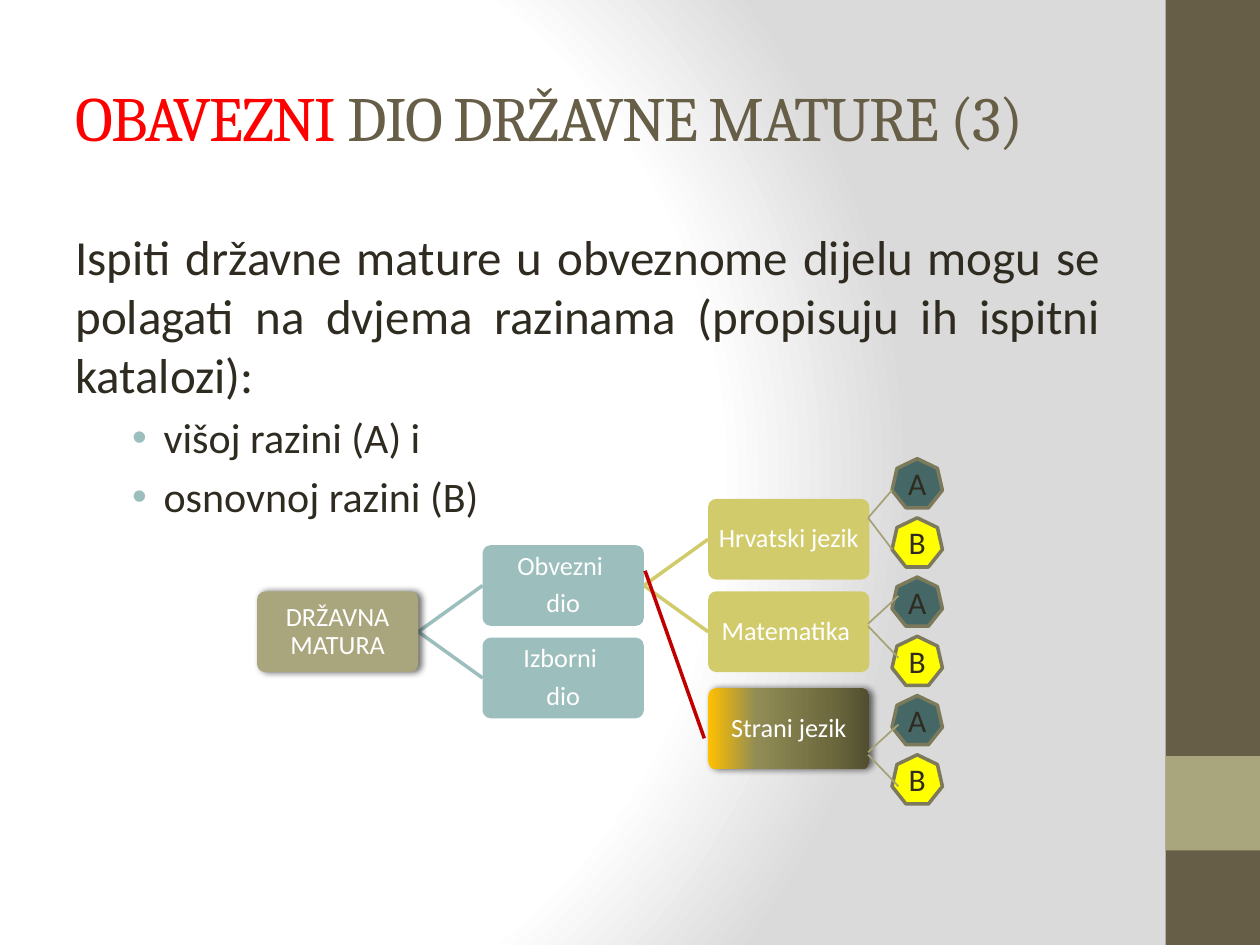
from lxml import etree
from pptx import Presentation
from pptx.dml.color import RGBColor
from pptx.enum.shapes import MSO_CONNECTOR, MSO_SHAPE
from pptx.enum.text import MSO_ANCHOR, PP_ALIGN
from pptx.oxml import parse_xml
from pptx.oxml.ns import nsdecls, qn
from pptx.util import Inches, Pt

RECT, ROUND, HEPTAGON = MSO_SHAPE.RECTANGLE, MSO_SHAPE.ROUNDED_RECTANGLE, MSO_SHAPE.HEPTAGON
STRAIGHT = MSO_CONNECTOR.STRAIGHT
TOP, MIDDLE = MSO_ANCHOR.TOP, MSO_ANCHOR.MIDDLE
LEFT, CENTER, JUSTIFY = PP_ALIGN.LEFT, PP_ALIGN.CENTER, PP_ALIGN.JUSTIFY

COLORS = {
    "brown": "675E47", "olive": "A9A57C", "teal": "9CBEBD", "lime": "D2CB6C",
    "dark_teal": "456867", "yellow": "FFFF00", "outline": "7D7A5C", "fork": "A6A278",
    "red": "FF0000", "dark_red": "C00000", "text": "2F2B20", "white": "FFFFFF",
}
BACKDROP = [(0, "FFFFFF"), (75, "FFFFFF"), (100, "DADADA")]
AMBER = [(0, "FFC000"), (30, "918C56"), (75, "6E6A3F"), (100, "514E2F")]

# Tree grid: columns one pitch apart, rows half a box pitch apart
TREE_X, TREE_Y, COL, ROW = 2.04, 3.96, 1.79, 0.367
BOX_W, BOX_H = 1.28, 0.64
LEVEL_X, LEVEL_Y, LEVEL_STEP = 7.08, 3.64, 0.47


def color(name):
    return RGBColor.from_string(COLORS[name])


def gradient_xml(stops, direction):
    gs = "".join(f'<a:gs pos="{pos * 1000}"><a:srgbClr val="{rgb}"/></a:gs>' for pos, rgb in stops)
    return f'<a:gradFill {nsdecls("a")} rotWithShape="1"><a:gsLst>{gs}</a:gsLst>{direction}</a:gradFill>'


def set_background(s):
    circle = '<a:path path="circle"><a:fillToRect l="20000" t="50000" r="100000" b="50000"/></a:path>'
    bg = parse_xml(f'<p:bg {nsdecls("p", "a")}><p:bgPr>{gradient_xml(BACKDROP, circle)}'
                   '<a:effectLst/></p:bgPr></p:bg>')
    s._element.cSld.insert(0, bg)


def add_shape(s, kind, x, y, w, h, fill, line=None):
    sp = s.shapes.add_shape(kind, Inches(x), Inches(y), Inches(w), Inches(h))
    sp.shadow.inherit = False
    sp.fill.solid()
    sp.fill.fore_color.rgb = color(fill)
    if line:
        sp.line.color.rgb = color(line)
        sp.line.width = Pt(2)
    else:
        sp.line.fill.background()
    return sp


def add_shadow(sp):
    effects = sp._element.spPr.find(qn("a:effectLst"))
    effects.append(parse_xml(
        f'<a:outerShdw {nsdecls("a")} blurRad="50800" dist="25400" dir="0" rotWithShape="0">'
        '<a:srgbClr val="000000"><a:alpha val="60000"/></a:srgbClr></a:outerShdw>'))


def add_gradient(sp):
    solid = sp._element.spPr.find(qn("a:solidFill"))
    solid.getparent().replace(solid, parse_xml(gradient_xml(AMBER, '<a:lin ang="0" scaled="0"/>')))


def add_line(s, start, end, line, width=2):
    cx = s.shapes.add_connector(STRAIGHT, *(Inches(v) for v in (*start, *end)))
    cx.line.color.rgb = color(line)
    cx.line.width = Pt(width)
    etree.SubElement(cx._element.spPr, qn("a:effectLst"))


def setup_frame(tf, anchor, inset):
    tf.word_wrap = True
    tf.vertical_anchor = anchor
    tf.margin_left = tf.margin_right = tf.margin_top = tf.margin_bottom = Inches(inset)


def add_paragraph(tf, first, align):
    p = tf.paragraphs[0] if first else tf.add_paragraph()
    p.alignment = align
    return p


def add_run(p, text, size, name, font="Calibri"):
    r = p.add_run()
    r.text = text
    r.font.size = Pt(size)
    r.font.name = font
    r.font.color.rgb = color(name)
    return r


def add_text_area(s, y, h, anchor):
    tf = s.shapes.add_textbox(Inches(0.5), Inches(y), Inches(8.33), Inches(h)).text_frame
    setup_frame(tf, anchor, 0.05)
    tf.margin_left = tf.margin_right = Inches(0.1)
    return tf


def add_bullet(p):
    pPr = p._p.get_or_add_pPr()
    pPr.set("marL", str(Inches(0.7)))
    pPr.set("indent", str(Inches(-0.25)))
    bullet_color = etree.SubElement(pPr, qn("a:buClr"))
    etree.SubElement(bullet_color, qn("a:srgbClr"), val=COLORS["teal"])
    etree.SubElement(pPr, qn("a:buFont"), typeface="Arial")
    etree.SubElement(pPr, qn("a:buChar"), char="•")


def add_node(s, col, row, lines, fill):
    sp = add_shape(s, ROUND, TREE_X + col * COL, TREE_Y + row * ROW, BOX_W, BOX_H, fill)
    sp.adjustments[0] = 0.1
    setup_frame(sp.text_frame, MIDDLE, 0.01)
    for i, text in enumerate(lines):
        p = add_paragraph(sp.text_frame, i == 0, CENTER)
        p.line_spacing = 0.9
        p.space_after = Pt(5.25)
        add_run(p, text, 15, "white")
    return sp


def add_branch(s, col, row, to_row, line):
    x, mid = TREE_X + col * COL + BOX_W, TREE_Y + BOX_H / 2
    add_line(s, (x, mid + row * ROW), (TREE_X + (col + 1) * COL, mid + to_row * ROW), line)


def add_level(s, index, letter, fill):
    sp = add_shape(s, HEPTAGON, LEVEL_X, LEVEL_Y + index * LEVEL_STEP, 0.4, 0.39, fill, "outline")
    setup_frame(sp.text_frame, MIDDLE, 0)
    add_run(add_paragraph(sp.text_frame, True, CENTER), letter, 18, "text")


def main():
    prs = Presentation()
    prs.slide_width, prs.slide_height = Inches(10), Inches(7.5)
    s = prs.slides.add_slide(prs.slide_layouts[6])

    # Background and side band
    set_background(s)
    add_shape(s, RECT, 9.25, 0, 0.75, 7.5, "brown")
    add_shape(s, RECT, 9.25, 6, 0.75, 0.75, "olive")

    # Title
    p = add_paragraph(add_text_area(s, 0.3, 1.25, MIDDLE), True, LEFT)
    for text, name in (("OBAVEZNI", "red"), (" DIO DRŽAVNE MATURE (3)", "brown")):
        r = add_run(p, text, 36, name, "Cambria")
        r.font._element.set("spc", "-100")

    # Body text
    tf = add_text_area(s, 1.75, 5.25, TOP)
    p = add_paragraph(tf, True, JUSTIFY)
    p.space_before = Pt(5.6)
    add_run(p, "Ispiti državne mature u obveznome dijelu mogu se polagati na dvjema "
               "razinama (propisuju ih ispitni katalozi):", 28, "text")
    for text in ("višoj razini (A) i", "osnovnoj razini (B)"):
        p = add_paragraph(tf, False, LEFT)
        p.space_before = Pt(4.8)
        add_bullet(p)
        add_run(p, text, 24, "text")

    # Exam tree
    for col, row, to_row, line in ((0, 2, 1, "teal"), (0, 2, 3, "teal"),
                                   (1, 1, 0, "lime"), (1, 1, 2, "lime")):
        add_branch(s, col, row, to_row, line)
    add_shadow(add_node(s, 0, 2, ["DRŽAVNA MATURA"], "olive"))
    add_node(s, 1, 1, ["Obvezni ", "dio"], "teal")
    add_node(s, 1, 3, ["Izborni ", "dio"], "teal")
    add_node(s, 2, 0, ["Hrvatski jezik"], "lime")
    add_node(s, 2, 2, ["Matematika "], "lime")
    language = add_node(s, 2, 4.1, ["Strani jezik"], "olive")
    add_gradient(language)
    add_shadow(language)
    add_line(s, (5.12, 4.53), (5.59, 5.86), "dark_red")

    # Exam levels, one A and one B for each subject
    for i in range(6):
        add_level(s, i, "AB"[i % 2], ("dark_teal", "yellow")[i % 2])
    for x, y_a, y_b in ((7.08, 4.11, 4.11), (7.13, 4.95, 4.97), (7.13, 5.97, 5.99)):
        add_line(s, (6.89, y_a), (x, y_a - 0.22), "fork", 1)
        add_line(s, (6.89, y_b), (x, y_b + 0.25), "fork", 1)

    prs.save("out.pptx")


if __name__ == "__main__":
    main()
